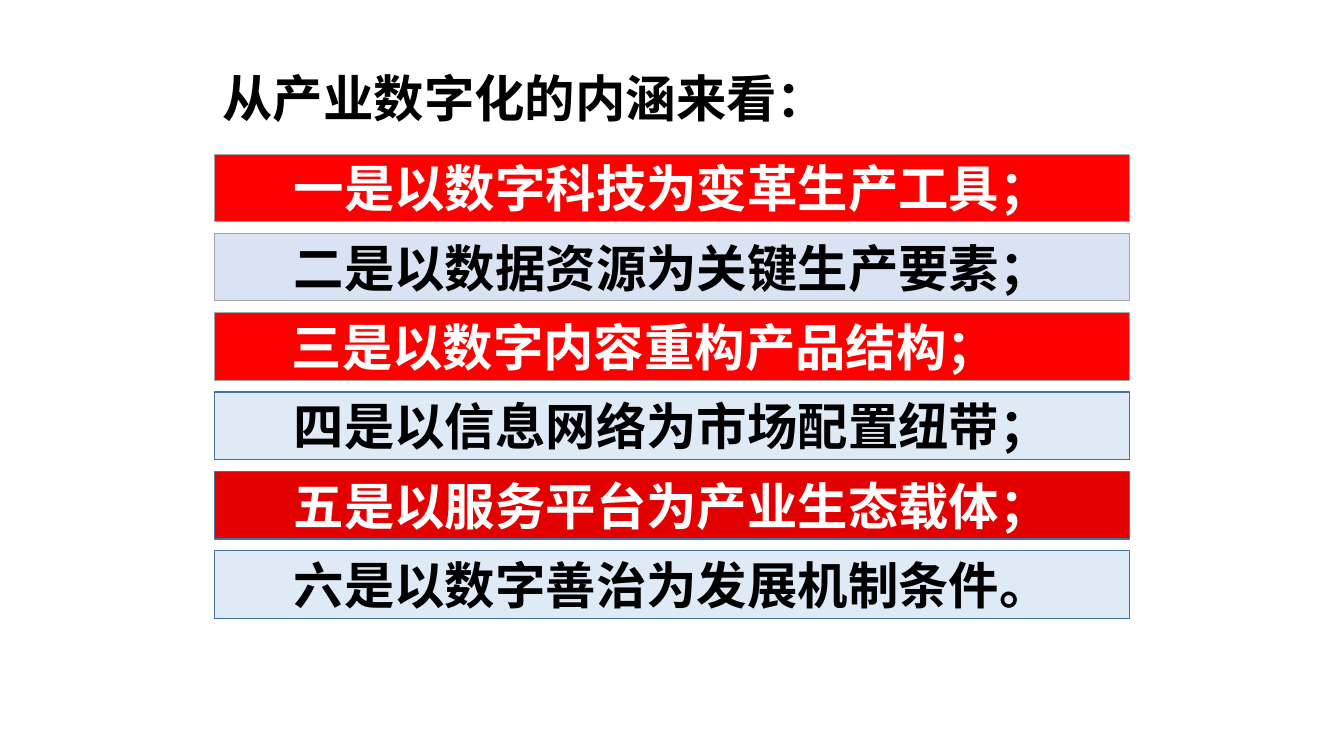
from pptx import Presentation
from pptx.dml.color import RGBColor
from pptx.enum import shapes, text
from pptx.util import Cm, Pt

WHITE = RGBColor(0xFF, 0xFF, 0xFF)
BLACK = RGBColor(0x00, 0x00, 0x00)
RED = RGBColor(0xFF, 0x00, 0x00)
CRIMSON = RGBColor(0xE3, 0x00, 0x00)
MAROON = RGBColor(0x76, 0x03, 0x03)
LAVENDER = RGBColor(0xDA, 0xE3, 0xF3)
PALE_BLUE = RGBColor(0xDE, 0xEB, 0xF7)
GREY = RGBColor(0xA5, 0xA5, 0xA5)
STEEL = RGBColor(0x43, 0x73, 0x9E)

CENTER, LEFT = text.PP_ALIGN.CENTER, text.PP_ALIGN.LEFT
BAR_PITCH, BAR_HEIGHT = 2.0, 1.7
LEFT_INDENT = 1.95

# wording, fill colours (two make a gradient), text colour, outline, width, alignment
POINTS = [
    ("一是以数字科技为变革生产工具；", [RED], WHITE, GREY, 0.5, CENTER),
    ("二是以数据资源为关键生产要素；", [LAVENDER], BLACK, GREY, 0.5, CENTER),
    ("三是以数字内容重构产品结构；", [RED], WHITE, GREY, 0.5, LEFT),
    ("四是以信息网络为市场配置纽带；", [PALE_BLUE], BLACK, STEEL, 1, CENTER),
    ("五是以服务平台为产业生态载体；", [CRIMSON, MAROON], WHITE, STEEL, 1, CENTER),
    ("六是以数字善治为发展机制条件。", [PALE_BLUE], BLACK, STEEL, 1, CENTER),
]


def write(box, words, color=BLACK, align=LEFT, anchor=text.MSO_ANCHOR.TOP):
    frame = box.text_frame
    frame.word_wrap = True
    frame.vertical_anchor = anchor
    para = frame.paragraphs[0]
    para.alignment = align
    span = para.add_run()
    span.text = words
    span.font.name = "Calibri"
    span.font.size = Pt(36)
    span.font.bold = True
    span.font.color.rgb = color


def paint(fill, colors):
    if len(colors) == 1:
        fill.solid()
        fill.fore_color.rgb = colors[0]
        return
    fill.gradient()
    fill.gradient_angle = 270
    for stop, color, position in zip(fill.gradient_stops, colors, (0.99, 1.0)):
        stop.color.rgb = color
        stop.position = position


def add_heading(page, left, top, width, height):
    box = page.shapes.add_textbox(Cm(left), Cm(top), Cm(width), Cm(height))
    write(box, "从产业数字化的内涵来看：")
    box.text_frame.auto_size = text.MSO_AUTO_SIZE.SHAPE_TO_FIT_TEXT


def add_points(page, left, top, width):
    for row, (words, fills, color, outline, weight, align) in enumerate(POINTS):
        bar = page.shapes.add_shape(
            shapes.MSO_SHAPE.FLOWCHART_PROCESS,
            Cm(left), Cm(top + row * BAR_PITCH), Cm(width), Cm(BAR_HEIGHT))
        bar.shadow.inherit = False
        paint(bar.fill, fills)
        bar.line.color.rgb = outline
        bar.line.width = Pt(weight)
        write(bar, words, color=color, align=align, anchor=text.MSO_ANCHOR.MIDDLE)
        if align == LEFT:
            bar.text_frame.margin_left = Cm(LEFT_INDENT)


def main():
    deck = Presentation()
    deck.slide_width, deck.slide_height = Cm(33.87), Cm(19.05)
    page = deck.slides.add_slide(deck.slide_layouts[6])

    # Heading above the six points
    add_heading(page, left=5.36, top=1.57, width=22, height=1.8)
    # Stack of bars
    add_points(page, left=5.4, top=3.88, width=23.06)

    deck.save("out.pptx")


if __name__ == "__main__":
    main()
